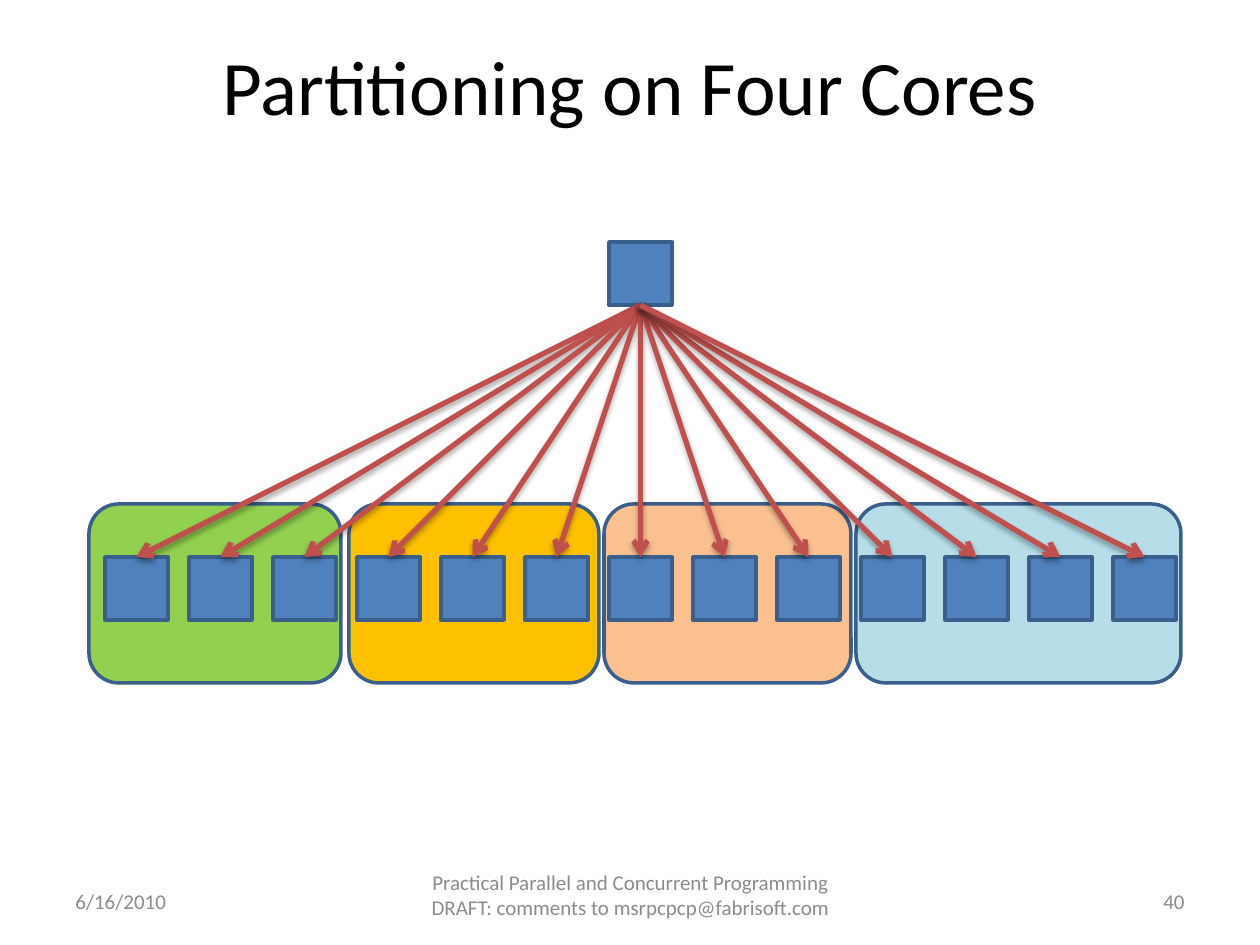
import pptx
import pptx.util
import pptx.dml.color
import pptx.enum.shapes
import pptx.enum.text
import pptx.oxml
import pptx.oxml.ns

RGBColor = pptx.dml.color.RGBColor
MSO_SHAPE = pptx.enum.shapes.MSO_SHAPE
PP_ALIGN = pptx.enum.text.PP_ALIGN
MSO_ANCHOR = pptx.enum.text.MSO_ANCHOR

PX = 914400 / 126
BLACK = RGBColor(0x00, 0x00, 0x00)
GRAY = RGBColor(0x8C, 0x8C, 0x8C)
BLUE = RGBColor(0x4F, 0x81, 0xBD)
OUTLINE = RGBColor(0x3A, 0x5F, 0x8C)
RED = RGBColor(0xC0, 0x50, 0x4D)
GREEN = RGBColor(0x92, 0xD0, 0x50)
AMBER = RGBColor(0xFF, 0xC0, 0x00)
PEACH = RGBColor(0xFA, 0xC0, 0x90)
AQUA = RGBColor(0xB7, 0xDE, 0xE8)

SIDE, PITCH, COUNT = 63, 84, 13
LEFT, ROOT_LEFT = 105, 609
ROOT_TOP, ROW_TOP = 242, 557

ARROW = '<a:tailEnd %s type="arrow"/>' % pptx.oxml.ns.nsdecls("a")
SHADOW = (
    '<a:effectLst %s><a:outerShdw blurRad="40000" dist="23000" dir="5400000" rotWithShape="0">'
    '<a:srgbClr val="000000"><a:alpha val="35000"/></a:srgbClr>'
    '</a:outerShdw></a:effectLst>' % pptx.oxml.ns.nsdecls("a")
)

prs = pptx.Presentation()
prs.slide_width = pptx.util.Inches(10)
prs.slide_height = pptx.util.Inches(7.5)
s = prs.slides.add_slide(prs.slide_layouts[6])


def add_text(text, box, size=12, color=GRAY, align=PP_ALIGN.LEFT, anchor=MSO_ANCHOR.MIDDLE):
    tf = s.shapes.add_textbox(*[int(v * PX) for v in box]).text_frame
    tf.word_wrap = True
    tf.vertical_anchor = anchor
    p = tf.paragraphs[0]
    p.alignment = align
    r = p.add_run()
    r.text = text
    r.font.name = "Calibri"
    r.font.size = pptx.util.Pt(size)
    r.font.color.rgb = color


def add_box(kind, box, fill):
    sp = s.shapes.add_shape(kind, *[int(v * PX) for v in box])
    sp.shadow.inherit = False
    sp.fill.solid()
    sp.fill.fore_color.rgb = fill
    sp.line.color.rgb = OUTLINE
    sp.line.width = pptx.util.Pt(2)
    return sp


for left, width, fill in [(89, 252, GREEN), (349, 250, AMBER), (604, 247, PEACH), (856, 325, AQUA)]:
    add_box(MSO_SHAPE.ROUNDED_RECTANGLE, (left, 504, width, 179), fill)

items = [
    add_box(MSO_SHAPE.RECTANGLE, (LEFT + i * PITCH, ROW_TOP, SIDE, SIDE), BLUE)
    for i in range(COUNT)
]
root = add_box(MSO_SHAPE.RECTANGLE, (ROOT_LEFT, ROOT_TOP, SIDE, SIDE), BLUE)

for item in items:
    c = s.shapes.add_connector(pptx.enum.shapes.MSO_CONNECTOR.STRAIGHT, 0, 0, 0, 0)
    c.begin_connect(root, 2)
    c.end_connect(item, 0)
    c.line.color.rgb = RED
    c.line.width = pptx.util.Pt(3)
    c.line._get_or_add_ln().append(pptx.oxml.parse_xml(ARROW))
    c._element.spPr.append(pptx.oxml.parse_xml(SHADOW))

add_text("Partitioning on Four Cores", (63, 32, 1134, 157), size=44, color=BLACK,
         align=PP_ALIGN.CENTER, anchor=MSO_ANCHOR.TOP)
add_text("Practical Parallel and Concurrent Programming DRAFT: comments to msrpcpcp@fabrisoft.com",
         (410, 876, 441, 38), align=PP_ALIGN.CENTER)
add_text("40", (903, 876, 294, 50), align=PP_ALIGN.RIGHT)
add_text("6/16/2010", (63, 876, 294, 50))

prs.save("out.pptx")
